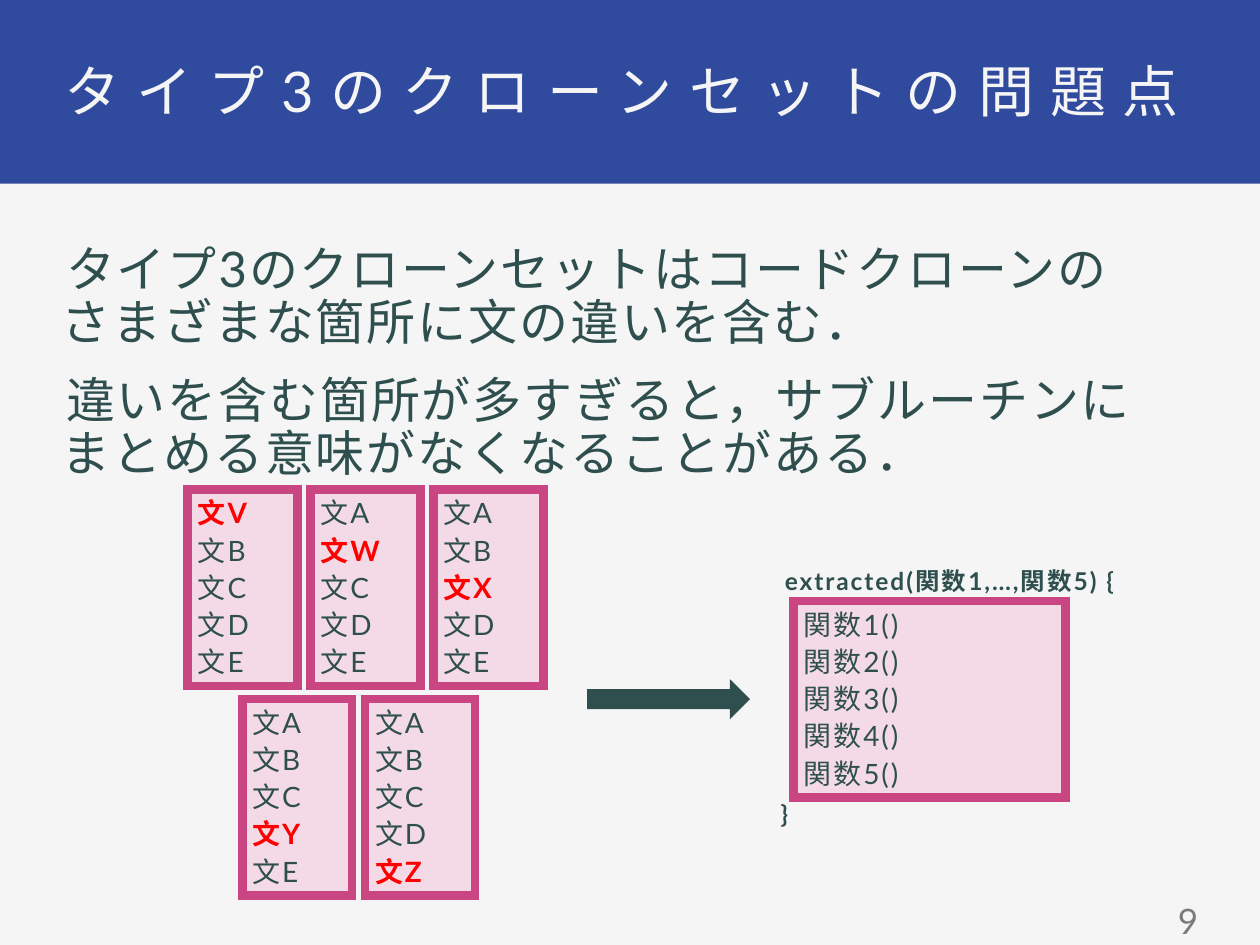
from lxml.etree import SubElement
from pptx import Presentation
from pptx.dml.color import RGBColor
from pptx.enum.shapes import MSO_SHAPE
from pptx.enum.text import MSO_ANCHOR, PP_ALIGN
from pptx.oxml.ns import qn
from pptx.util import Pt

COLORS = {
    "background": "F5F5F5",
    "banner": "304A9E",
    "text": "2F4F4F",
    "highlight": "FF0000",
    "box_fill": "F4DAE6",
    "box_line": "CA4683",
    "number": "7A7A7A",
}
COMMON_STATEMENTS = "ABCDE"
CLONE_ROWS = [(0, ["VBCDE", "AWCDE", "ABXDE"]), (31.2, ["ABCYE", "ABCDZ"])]


def color(name):
    """Return the named colour."""
    return RGBColor.from_string(COLORS[name])


def add_rectangle(slide, box, fill, preset=MSO_SHAPE.RECTANGLE):
    """Add a filled preset shape without outline or shadow."""
    shape = slide.shapes.add_shape(preset, *map(Pt, box))
    shape.shadow.inherit = False
    shape.fill.solid()
    shape.fill.fore_color.rgb = color(fill)
    shape.line.fill.background()
    return shape


def set_frame(shape, inset, anchor=MSO_ANCHOR.TOP):
    """Set the insets, anchor and wrapping of a shape's text."""
    frame = shape.text_frame
    frame.margin_left = frame.margin_right = Pt(inset)
    frame.margin_top = frame.margin_bottom = Pt(inset)
    frame.vertical_anchor = anchor
    frame.word_wrap = True
    return frame


def write_lines(frame, lines, size, before=0, after=0, align=PP_ALIGN.LEFT, spacing=0.9, tracking=110):
    """Write one paragraph for each (text, colour, bold) line."""
    for index, (text, color_name, bold) in enumerate(lines):
        paragraph = frame.add_paragraph() if index else frame.paragraphs[0]
        paragraph.text = text
        paragraph.alignment = align
        paragraph.line_spacing = spacing
        paragraph.space_before = Pt(before)
        paragraph.space_after = Pt(after)
        paragraph.font.name = "Lato"
        paragraph.font.size = Pt(size)
        paragraph.font.bold = bold
        paragraph.font.color.rgb = color(color_name)
        paragraph._p.pPr.get_or_add_defRPr().set("spc", str(tracking))


def add_title(slide, box):
    """Add the banner and the title spread across it."""
    left, top, width, height = box
    add_rectangle(slide, box, "banner")
    title = slide.shapes.add_textbox(Pt(left + 31), Pt(top + 31), Pt(width - 62), Pt(42.5))
    frame = set_frame(title, 5.76)
    lines = [("タイプ3のクローンセットの問題点\v", "background", False)]
    write_lines(frame, lines, 32, before=16, align=PP_ALIGN.JUSTIFY)


def add_body(slide, box):
    """Add the two statements about type 3 clone sets."""
    frame = set_frame(slide.shapes.add_textbox(*map(Pt, box)), 4.32)
    statements = [
        "タイプ3のクローンセットはコードクローンの\vさまざまな箇所に文の違いを含む．",
        "違いを含む箇所が多すぎると，サブルーチンに\vまとめる意味がなくなることがある．",
    ]
    write_lines(frame, [(text, "text", False) for text in statements], 28, before=14)
    for paragraph in frame.paragraphs:
        paragraph._p.pPr.set("indent", str(Pt(2.5)))


def add_code_box(slide, box, lines):
    """Add a box of code lines with a square-cornered outline."""
    shape = add_rectangle(slide, box, "box_fill")
    shape.line.color.rgb = color("box_line")
    shape.line.width = Pt(5)
    SubElement(shape._element.spPr.find(qn("a:ln")), qn("a:miter"), lim="800000")
    write_lines(set_frame(shape, 5.76), lines, 16, before=3, after=1)


def add_clone_set(slide, box):
    """Add the rows of clones, marking each differing statement."""
    left, top, width, height = box
    gap = 7.4
    box_width, box_height = (width - 2 * gap) / 3, (height - gap) / 2
    for row, (indent, clones) in enumerate(CLONE_ROWS):
        for column, clone in enumerate(clones):
            lines = []
            for letter in clone:
                differs = letter not in COMMON_STATEMENTS
                lines.append((f"文{letter}", "highlight" if differs else "text", differs))
            x = left + indent + column * (box_width + gap)
            y = top + row * (box_height + gap)
            add_code_box(slide, (x, y, box_width, box_height), lines)


def add_code_label(slide, box, text):
    """Add a bold centred line of code."""
    label = slide.shapes.add_textbox(*map(Pt, box))
    frame = set_frame(label, 5.76, MSO_ANCHOR.MIDDLE)
    write_lines(frame, [(text, "text", True)], 14, before=3, after=1, align=PP_ALIGN.CENTER)


def add_subroutine(slide, box):
    """Add the extracted subroutine with its opening and closing lines."""
    left, top, width, height = box
    calls = [(f"関数{number}()", "text", False) for number in range(1, 6)]
    add_code_box(slide, box, calls)
    add_code_label(slide, (left - 31, top - 17.5, 240, 14), "extracted(関数1,…,関数5) {")
    add_code_label(slide, (left - 64, top + height + 3, 117.5, 14), "}")


def add_page_number(slide, box):
    """Add the page number at the lower right."""
    frame = set_frame(slide.shapes.add_textbox(*map(Pt, box)), 4.32, MSO_ANCHOR.MIDDLE)
    write_lines(frame, [("9", "number", False)], 20, align=PP_ALIGN.RIGHT, spacing=1.0, tracking=0)


def main():
    """Build and save the slide."""
    presentation = Presentation()
    presentation.slide_width, presentation.slide_height = Pt(720), Pt(540)
    slide = presentation.slides.add_slide(presentation.slide_layouts[6])
    slide.background.fill.solid()
    slide.background.fill.fore_color.rgb = color("background")
    add_title(slide, (0, 0, 720, 105))
    add_body(slide, (31, 136, 657, 373))
    add_clone_set(slide, (107.2, 279.8, 203.2, 232))
    add_rectangle(slide, (335.5, 388, 93, 23), "text", MSO_SHAPE.RIGHT_ARROW)
    add_subroutine(slide, (453.5, 343.5, 155.5, 112.3))
    add_page_number(slide, (527, 512, 162, 28))
    presentation.save("out.pptx")


if __name__ == "__main__":
    main()
